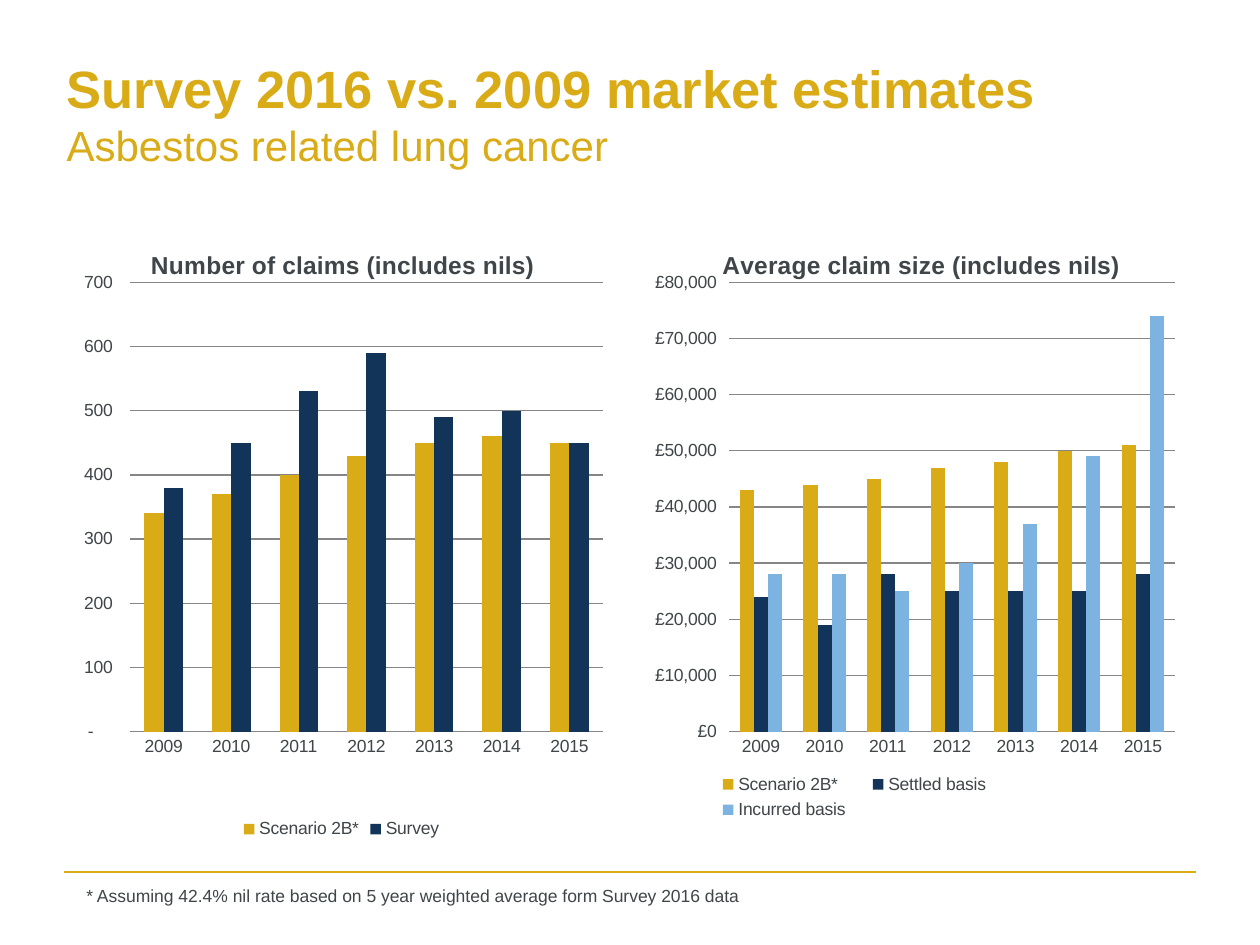
"""Build the slide comparing the 2016 survey with the 2009 market estimates."""
from pptx import Presentation
from pptx import util as u
from pptx.chart.data import CategoryChartData
from pptx.dml.color import RGBColor
from pptx.enum import chart as charts
from pptx.enum import shapes, text
from pptx.oxml import parse_xml
from pptx.oxml.ns import nsdecls, qn

PX_PER_INCH = 126
GOLD = RGBColor(0xD9, 0xAB, 0x16)
NAVY = RGBColor(0x11, 0x34, 0x58)
SKY = RGBColor(0x7C, 0xB3, 0xE1)
SLATE = RGBColor(0x3F, 0x45, 0x48)
GREY = RGBColor(0x86, 0x86, 0x86)

YEARS = [str(year) for year in range(2009, 2016)]
CHART_TOP, CHART_WIDTH, CHART_HEIGHT = 220, 557, 624


def px(length):
    return u.Emu(round(length * u.Inches(1) / PX_PER_INCH))


def format_font(font, size, color, bold=False, name="Arial"):
    font.name = name
    font.size = u.Pt(size)
    font.bold = bold
    font.color.rgb = color


def add_text(paragraph, content, **font_format):
    run = paragraph.add_run()
    run.text = content
    format_font(run.font, **font_format)


def set_layout(parent, index, x, y, w=None, h=None, inner=False):
    for old in parent.findall(qn("c:layout")):
        parent.remove(old)
    settings = [("layoutTarget", "inner")] if inner else []
    settings += [("xMode", "edge"), ("yMode", "edge")]
    sides = {"x": x, "y": y, "w": w, "h": h}
    settings += [(tag, value) for tag, value in sides.items() if value is not None]
    body = "".join(f'<c:{tag} val="{value}"/>' for tag, value in settings)
    parent.insert(index, parse_xml(
        f'<c:layout {nsdecls("c")}><c:manualLayout>{body}</c:manualLayout></c:layout>'))


class SlideBuilder:
    def __init__(self, slide, accent=GOLD, ink=SLATE):
        self.slide = slide
        self.accent = accent
        self.ink = ink

    def title(self, left, top, width, height, heading, subheading):
        shape = self.slide.shapes.title
        shape.left, shape.top, shape.width, shape.height = map(px, (left, top, width, height))
        frame = shape.text_frame
        frame.word_wrap = True
        frame.auto_size = text.MSO_AUTO_SIZE.NONE
        frame.vertical_anchor = text.MSO_ANCHOR.TOP
        frame.margin_top = px(1)
        paragraph = frame.paragraphs[0]
        paragraph.alignment = text.PP_ALIGN.LEFT
        add_text(paragraph, heading, size=30, color=self.accent, bold=True)
        paragraph.add_line_break()
        add_text(paragraph, subheading, size=24, color=self.accent)

    def rule(self, left, right, top):
        line = self.slide.shapes.add_connector(
            shapes.MSO_CONNECTOR.STRAIGHT, px(left), px(top), px(right), px(top))
        line.line.color.rgb = self.accent
        line.line.width = u.Pt(1)
        line._element.spPr.append(parse_xml(f'<a:effectLst {nsdecls("a")}/>'))

    def note(self, left, top, width, height, content):
        box = self.slide.shapes.add_textbox(*map(px, (left, top, width, height)))
        box.text_frame.word_wrap = False
        box.text_frame.auto_size = text.MSO_AUTO_SIZE.SHAPE_TO_FIT_TEXT
        add_text(box.text_frame.paragraphs[0], content, size=10, color=self.ink)

    def column_chart(self, left, title, series, number_format, maximum, step,
                     plot_x, plot_width, title_x, legend_layout=None):
        data = CategoryChartData()
        data.categories = YEARS
        for name, _, values in series:
            data.add_series(name, values)
        chart = self.slide.shapes.add_chart(
            charts.XL_CHART_TYPE.COLUMN_CLUSTERED,
            *map(px, (left, CHART_TOP, CHART_WIDTH, CHART_HEIGHT)), data).chart
        format_font(chart.font, size=10, color=self.ink)

        chart.has_title = True
        add_text(chart.chart_title.text_frame.paragraphs[0], title,
                 size=14, color=self.ink, bold=True)
        chart.has_legend = True
        chart.legend.position = charts.XL_LEGEND_POSITION.BOTTOM
        chart.legend.include_in_layout = False

        plot = chart.plots[0]
        plot.gap_width = 150
        plot.overlap = 0
        plot.vary_by_categories = False
        for column, (_, color, _) in zip(plot.series, series):
            column.invert_if_negative = False
            column.format.fill.solid()
            column.format.fill.fore_color.rgb = color

        category_axis, value_axis = chart.category_axis, chart.value_axis
        category_axis.major_tick_mark = charts.XL_TICK_MARK.NONE
        category_axis.format.line.color.rgb = GREY
        value_axis.major_tick_mark = charts.XL_TICK_MARK.OUTSIDE
        value_axis.minimum_scale = 0
        value_axis.maximum_scale = maximum
        value_axis.major_unit = step
        value_axis.format.line.fill.background()
        value_axis.major_gridlines.format.line.color.rgb = GREY
        value_axis.tick_labels.number_format = number_format
        value_axis.tick_labels.number_format_is_linked = False

        root = chart._chartSpace.chart
        set_layout(root.plotArea, 0, plot_x, 0.1, plot_width, 0.72, inner=True)
        set_layout(root.find(qn("c:title")), 1, title_x, 0.04)
        if legend_layout:
            set_layout(root.find(qn("c:legend")), 1, *legend_layout)


def main():
    presentation = Presentation()
    presentation.slide_width, presentation.slide_height = px(1260), px(945)
    builder = SlideBuilder(presentation.slides.add_slide(presentation.slide_layouts[5]))
    builder.rule(64, 1196, 872)
    builder.title(54, 55, 1143, 158, "Survey 2016 vs. 2009 market estimates",
                  "Asbestos related lung cancer")
    builder.note(74, 879, 683, 34, "* Assuming 42.4% nil rate based on 5 year "
                 "weighted average form Survey 2016 data")
    builder.column_chart(
        63, "Number of claims (includes nils)",
        [("Scenario 2B*", GOLD, (340, 370, 400, 430, 450, 460, 450)),
         ("Survey", NAVY, (380, 450, 530, 590, 490, 500, 450))],
        '_-* #,##0_-;\\-* #,##0_-;_-* "-"??_-;_-@_', 700, 100,
        plot_x=0.12, plot_width=0.85, title_x=0.15)
    builder.column_chart(
        640, "Average claim size (includes nils)",
        [("Scenario 2B*", GOLD, (43000, 44000, 45000, 47000, 48000, 50000, 51000)),
         ("Settled basis", NAVY, (24000, 19000, 28000, 25000, 25000, 25000, 28000)),
         ("Incurred basis", SKY, (28000, 28000, 25000, 30000, 37000, 49000, 74000))],
        '"£"#,##0', 80000, 10000,
        plot_x=0.16, plot_width=0.8, title_x=0.14,
        legend_layout=(0.11, 0.88, 0.55, 0.09))
    presentation.save("out.pptx")


if __name__ == "__main__":
    main()
